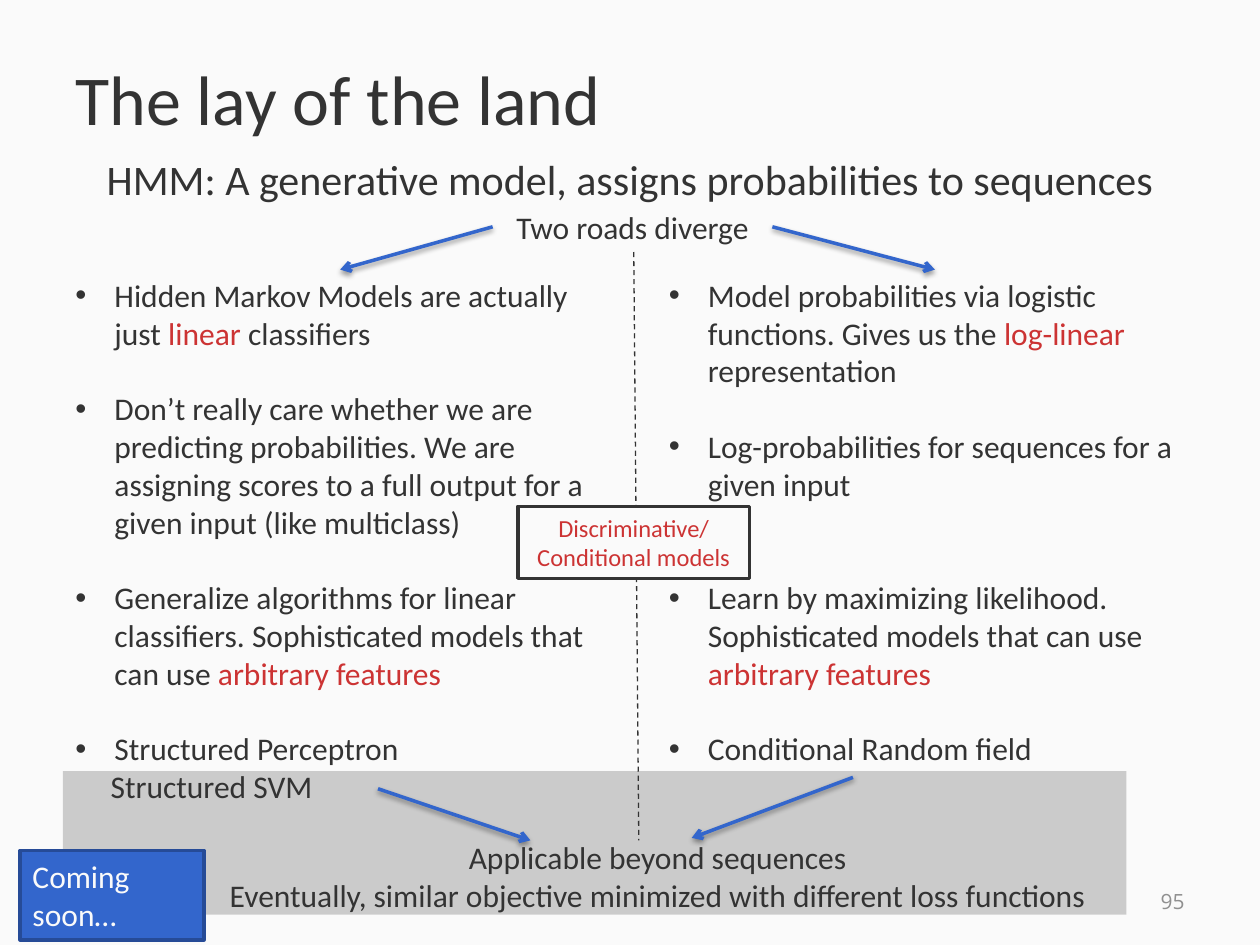
from dataclasses import dataclass

from lxml.etree import SubElement
from pptx import Presentation
from pptx.dml.color import RGBColor
from pptx.enum.dml import MSO_LINE
from pptx.enum.shapes import MSO_CONNECTOR, MSO_SHAPE
from pptx.enum.text import MSO_ANCHOR, MSO_AUTO_SIZE, PP_ALIGN
from pptx.oxml.ns import qn
from pptx.util import Inches, Pt


@dataclass(frozen=True)
class Theme:
    font: str = "Calibri"
    page_font: str = "Open Sans"
    paper: str = "FAFAFA"
    ink: str = "333333"
    red: str = "CC3333"
    blue: str = "3366CC"
    edge: str = "264B97"
    gray: str = "909090"
    title: int = 40
    lead: int = 24
    text: int = 18
    label: int = 14
    page: int = 12
    gap: float = 21.6  # one line of list text, in points


T = Theme()
WIDTH, HEIGHT = 10, 7.5
MARGIN = 0.05 * WIDTH
COLS = (MARGIN, MARGIN + 4.71)
COL_TOP, COL_W, COL_H = 2.14, 4.41, 4.34
INDENT = 0.31

# Each item: lines of space before it, then text with *red* words
LEFT = [
    (0, "Hidden Markov Models are actually just *linear* classifiers"),
    (1, "Don’t really care whether we are predicting probabilities. "
        "We are assigning scores to a full output for a given input (like multiclass)"),
    (1, "Generalize algorithms for linear classifiers. "
        "Sophisticated models that can use *arbitrary features*"),
    (1, "Structured Perceptron"),
]
RIGHT = [
    (0, "Model probabilities via logistic functions. "
        "Gives us the *log-linear *representation"),
    (1, "Log-probabilities for sequences for a given input"),
    (2, "Learn by maximizing likelihood. "
        "Sophisticated models that can use *arbitrary features*"),
    (1, "Conditional Random field"),
]


def rgb(code):
    return RGBColor.from_string(code)


def style(run, size=T.text, color=T.ink, font=T.font):
    run.font.size, run.font.name = Pt(size), font
    run.font.color.rgb = rgb(color)


def write(frame, text, align=PP_ALIGN.LEFT, **look):
    frame.text = text
    for para in frame.paragraphs:
        para.alignment = align
        for run in para.runs:
            style(run, **look)


def add_text(slide, box, text="", wrap=True, **look):
    frame = slide.shapes.add_textbox(*map(Inches, box)).text_frame
    frame.word_wrap = wrap
    write(frame, text, **look)
    return frame


def fill_holder(holder, box, text, **look):
    holder.left, holder.top, holder.width, holder.height = map(Inches, box)
    holder.text_frame.auto_size = MSO_AUTO_SIZE.NONE
    write(holder.text_frame, text, **look)
    return holder.text_frame.paragraphs[0]


def indent(para, left, hang=0):
    props = para._p.get_or_add_pPr()
    props.set("marL", str(Inches(left)))
    props.set("indent", str(Inches(-hang)))
    return props


def add_list(slide, left, items):
    frame = add_text(slide, (left, COL_TOP, COL_W, COL_H))
    for i, (gap, text) in enumerate(items):
        para = frame.add_paragraph() if i else frame.paragraphs[0]
        para.space_before = Pt(gap * T.gap)
        props = indent(para, INDENT, INDENT)
        SubElement(props, qn("a:buFont"), typeface="Arial")
        SubElement(props, qn("a:buChar"), char="•")
        for j, part in enumerate(text.split("*")):
            if part:
                run = para.add_run()
                run.text = part
                style(run, color=T.red if j % 2 else T.ink)
    return frame


def add_box(slide, box, fill, line=None, text="", **look):
    shape = slide.shapes.add_shape(MSO_SHAPE.RECTANGLE, *map(Inches, box))
    shape.shadow.inherit = False
    shape.fill.solid()
    shape.fill.fore_color.rgb = rgb(fill)
    if line:
        shape.line.color.rgb, shape.line.width = rgb(line), Pt(2)
    else:
        shape.line.fill.background()
    frame = shape.text_frame
    frame.word_wrap, frame.vertical_anchor = True, MSO_ANCHOR.TOP
    write(frame, text, **look)
    return shape


def add_line(slide, ends, color, width):
    line = slide.shapes.add_connector(MSO_CONNECTOR.STRAIGHT, *map(Inches, ends))
    line.line.color.rgb, line.line.width = rgb(color), Pt(width)
    effects = SubElement(line._element.spPr, qn("a:effectLst"))
    return line, effects


def add_arrow(slide, ends):
    line, effects = add_line(slide, ends, T.blue, 2)
    SubElement(line.line._get_or_add_ln(), qn("a:tailEnd"), type="arrow")
    shadow = SubElement(effects, qn("a:outerShdw"), blurRad=str(Pt(3.1)),
                        dist=str(Pt(1.6)), dir="5400000", rotWithShape="0")
    black = SubElement(shadow, qn("a:srgbClr"), val="000000")
    SubElement(black, qn("a:alpha"), val="38000")


def main():
    deck = Presentation()
    deck.slide_width, deck.slide_height = Inches(WIDTH), Inches(HEIGHT)
    slide = deck.slides.add_slide(deck.slide_layouts[1])
    slide.background.fill.solid()
    slide.background.fill.fore_color.rgb = rgb(T.paper)

    # Band behind the conclusion
    band = add_box(slide, (MARGIN, 6.12, 8.44, 1.14), T.ink)
    color = band._element.spPr.find(qn("a:solidFill"))[0]
    SubElement(color, qn("a:alpha"), val="23000")

    # Title and lead line
    title, body = slide.placeholders
    fill_holder(title, (MARGIN, 0.15, 9, 1.25), "The lay of the land", size=T.title)
    title.text_frame.vertical_anchor = MSO_ANCHOR.MIDDLE
    lead = fill_holder(body, (MARGIN, 1.17, 9, 4.95),
                       "HMM: A generative model, assigns probabilities to sequences",
                       size=T.lead, align=PP_ALIGN.CENTER)
    lead.space_before = Pt(0.2 * T.lead)
    SubElement(indent(lead, 0), qn("a:buNone"))

    # Two roads
    add_text(slide, (3.91, 1.6, 2.22, 0.4), "Two roads diverge", align=PP_ALIGN.CENTER)
    frame = add_list(slide, COLS[0], LEFT)
    add_list(slide, COLS[1], RIGHT)
    extra = frame.add_paragraph()
    extra.text = "Structured SVM"
    indent(extra, 0.28)
    style(extra.runs[0])

    # Conclusion and page number
    add_text(slide, (1.66, 6.6, 7.12, 0.71),
             "Applicable beyond sequences\n"
             "Eventually, similar objective minimized with different loss functions",
             wrap=False, align=PP_ALIGN.CENTER)
    page = add_text(slide, (7.17, 6.95, 2.33, 0.4), "95", align=PP_ALIGN.RIGHT,
                    size=T.page, color=T.gray, font=T.page_font)
    page.vertical_anchor = MSO_ANCHOR.MIDDLE

    # Arrows and divider
    for ends in ((3.91, 1.8, 2.7, 2.14), (6.13, 1.8, 7.42, 2.14),
                 (3, 6.26, 4.21, 6.67), (6.77, 6.17, 5.49, 6.65)):
        add_arrow(slide, ends)
    divider, _ = add_line(slide, (5.03, 2, 5.07, 6.67), T.ink, 0.75)
    divider.line.dash_style = MSO_LINE.DASH

    # Labels
    add_box(slide, (0.16, 6.75, 1.46, 0.71), T.blue, T.edge,
            "Coming soon…", color=T.paper)
    add_box(slide, (4.11, 4.02, 1.84, 0.57), T.paper, T.ink,
            "Discriminative/Conditional models", align=PP_ALIGN.CENTER,
            size=T.label, color=T.red)

    deck.save("out.pptx")


if __name__ == "__main__":
    main()
